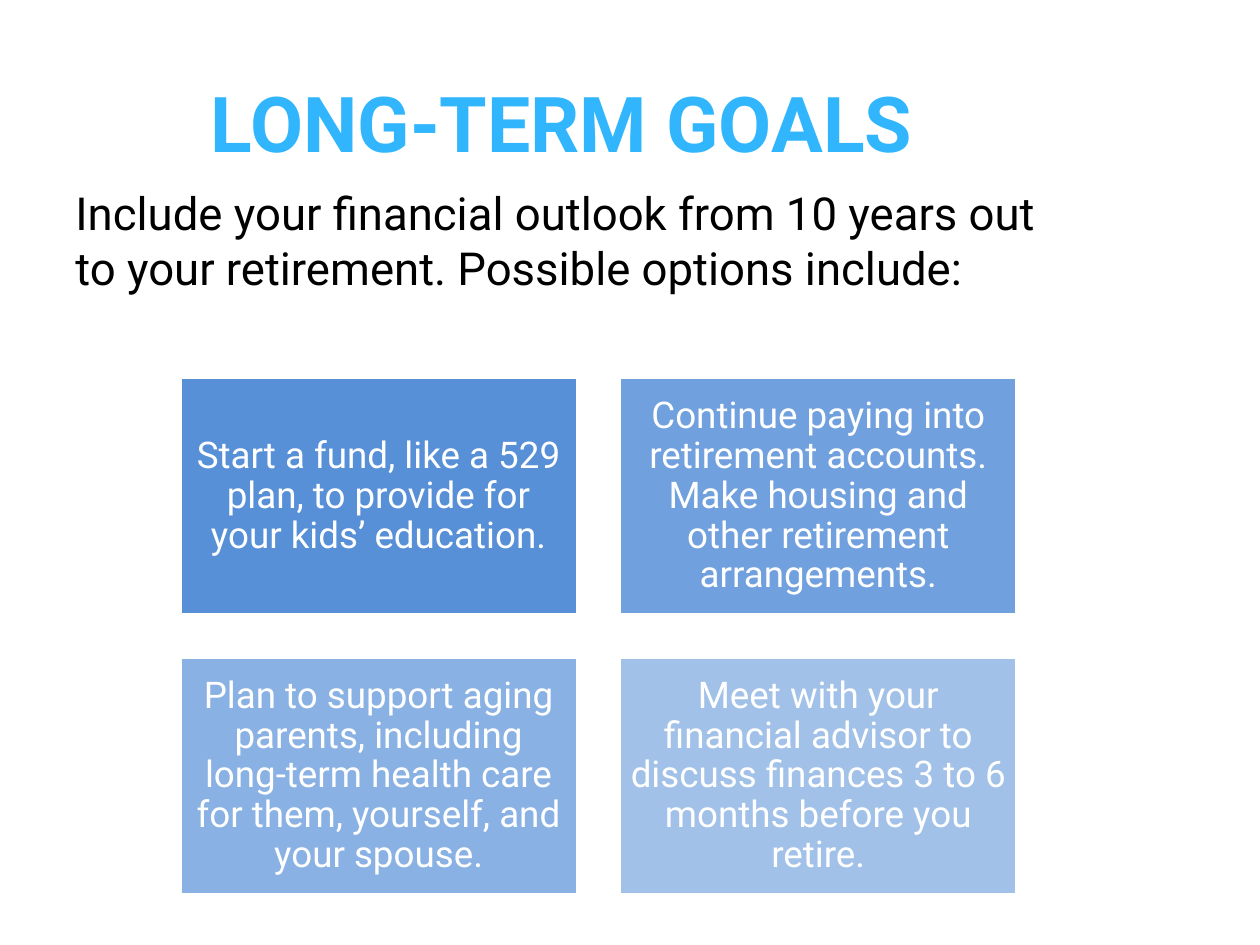
from lxml import etree
from pptx import Presentation
from pptx.dml.color import RGBColor
from pptx.enum.shapes import MSO_SHAPE
from pptx.enum.text import MSO_ANCHOR, PP_ALIGN
from pptx.oxml.ns import qn
from pptx.util import Inches, Pt

RECTANGLE = MSO_SHAPE.RECTANGLE
TOP, MIDDLE, BOTTOM = MSO_ANCHOR.TOP, MSO_ANCHOR.MIDDLE, MSO_ANCHOR.BOTTOM
LEFT, CENTER = PP_ALIGN.LEFT, PP_ALIGN.CENTER

TITLE = "LONG-TERM GOALS"
INTRO = ("Include your financial outlook from 10 years out to your retirement. "
         "Possible options include:")
# Each goal with the opacity of its tile in percent
GOALS = [
    ("Start a fund, like a 529 plan, to provide for your kids’ education.", 90),
    ("Continue paying into retirement accounts. Make housing and other "
     "retirement arrangements.", 77),
    ("Plan to support aging parents, including long-term health care for them, "
     "yourself, and your spouse.", 63),
    ("Meet with your financial advisor to discuss finances 3 to 6 months "
     "before you retire.", 50),
]

THEME = {
    "font": "Roboto",
    "title": {"size": 44, "color": "31B6FD", "bold": True},
    "intro": {"size": 26, "color": "000000", "bold": False},
    "goal": {"size": 21, "color": "FFFFFF", "bold": False},
    "tile": "4584D3",
    "border": "FFFFFF",
    "border_width": 3.15,
}

COLUMNS = 2
GRID_LEFT, GRID_TOP = 1.42, 2.99
TILE_WIDTH, TILE_HEIGHT = 3.17, 1.9
GAP = 0.32


def write_text(shape, text, style, anchor, insets, para_format):
    """Fill a shape with one paragraph; insets are (horizontal, vertical) inches."""
    frame = shape.text_frame
    across, down = (Inches(inset) for inset in insets)
    frame_format = {
        "word_wrap": True, "vertical_anchor": anchor,
        "margin_left": across, "margin_right": across,
        "margin_top": down, "margin_bottom": down,
    }
    for name, value in frame_format.items():
        setattr(frame, name, value)
    para = frame.paragraphs[0]
    for name, value in para_format.items():
        setattr(para, name, value)
    span = para.add_run()
    span.text = text
    look = THEME[style]
    font_format = {"name": THEME["font"], "size": Pt(look["size"]), "bold": look["bold"]}
    for name, value in font_format.items():
        setattr(span.font, name, value)
    span.font.color.rgb = RGBColor.from_string(look["color"])


def add_tile(page, left, top, opacity):
    tile = page.shapes.add_shape(RECTANGLE, Inches(left), Inches(top),
                                 Inches(TILE_WIDTH), Inches(TILE_HEIGHT))
    tile.shadow.inherit = False
    tile.fill.solid()
    tile.fill.fore_color.rgb = RGBColor.from_string(THEME["tile"])
    color = tile.fill._xPr.find(qn("a:solidFill")).find(qn("a:srgbClr"))
    etree.SubElement(color, qn("a:alpha")).set("val", str(opacity * 1000))
    tile.line.color.rgb = RGBColor.from_string(THEME["border"])
    tile.line.width = Pt(THEME["border_width"])
    return tile


def main():
    deck = Presentation()
    deck.slide_width, deck.slide_height = Inches(10), Inches(7.5)
    page = deck.slides.add_slide(deck.slide_layouts[6])

    title = page.shapes.add_textbox(Inches(0.5), Inches(0.35), Inches(7.92), Inches(0.98))
    write_text(title, TITLE, "title", BOTTOM, (0.05, 0), {"alignment": CENTER})
    intro = page.shapes.add_textbox(Inches(0.5), Inches(1.42), Inches(7.92), Inches(1.1))
    write_text(intro, INTRO, "intro", TOP, (0.1, 0.05), {"alignment": LEFT})

    for index, (goal, opacity) in enumerate(GOALS):
        row, column = divmod(index, COLUMNS)
        tile = add_tile(page, GRID_LEFT + column * (TILE_WIDTH + GAP),
                        GRID_TOP + row * (TILE_HEIGHT + GAP), opacity)
        write_text(tile, goal, "goal", MIDDLE, (0.09, 0.09),
                   {"alignment": CENTER, "line_spacing": 0.9})

    deck.save("out.pptx")


if __name__ == "__main__":
    main()
